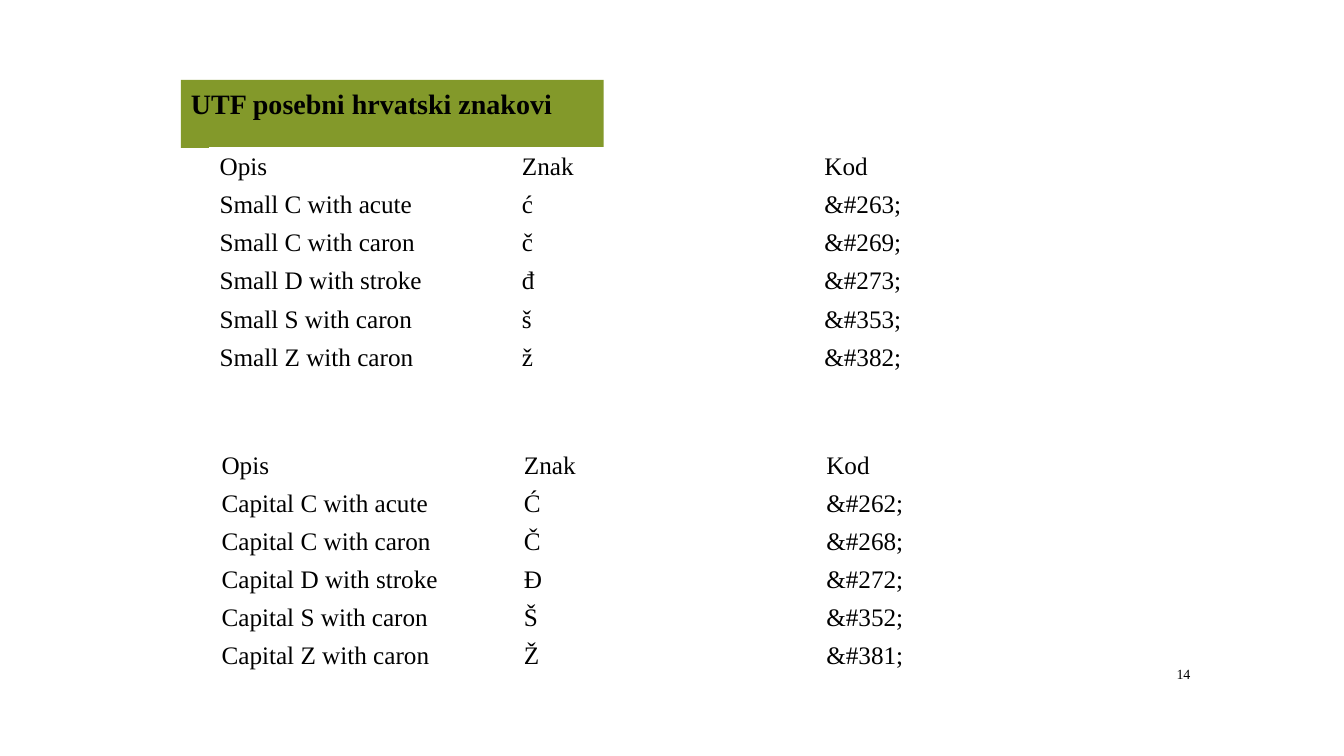
from pptx import Presentation
from pptx.dml.color import RGBColor
from pptx.enum.text import MSO_ANCHOR, MSO_AUTO_SIZE, PP_ALIGN
from pptx.util import Cm, Pt

BLACK = RGBColor(0x00, 0x00, 0x00)
GREEN = RGBColor(0x83, 0x99, 0x2A)
FONT = "Times New Roman"
LEFT = PP_ALIGN.LEFT
RIGHT = PP_ALIGN.RIGHT
TOP = MSO_ANCHOR.TOP
MIDDLE = MSO_ANCHOR.MIDDLE
NO_AUTOFIT = MSO_AUTO_SIZE.NONE

COLUMN_WIDTH = Cm(7.62)
ROW_HEIGHT = Cm(0.96)
HEADERS = ("Opis", "Znak", "Kod")
LETTERS = ("C with acute", "C with caron", "D with stroke", "S with caron", "Z with caron")
CHARACTER_TABLES = (
    ("Small", "ćčđšž", Cm(5.28), Cm(3.73)),
    ("Capital", "ĆČĐŠŽ", Cm(5.33), Cm(11.26)),
)


def write_text(text_frame, text, size, bold=False, alignment=LEFT):
    paragraph = text_frame.paragraphs[0]
    paragraph.alignment = alignment
    run = paragraph.add_run()
    run.text = text
    run.font.name = FONT
    run.font.size = Pt(size)
    run.font.bold = bold
    run.font.color.rgb = BLACK


presentation = Presentation()
presentation.slide_width = Cm(33.87)
presentation.slide_height = Cm(19.05)
slide = presentation.slides.add_slide(presentation.slide_layouts[5])

title = slide.shapes.title
title.left, title.top, title.width, title.height = Cm(4.56), Cm(2.01), Cm(10.65), Cm(1.72)
title.fill.solid()
title.fill.fore_color.rgb = GREEN
title_frame = title.text_frame
title_frame.auto_size = NO_AUTOFIT
title_frame.word_wrap = False
title_frame.vertical_anchor = TOP
title_frame.margin_left = Cm(0.25)
title_frame.margin_top = Cm(0.16)
write_text(title_frame, "UTF posebni hrvatski znakovi", 20, bold=True)

for letter_case, characters, left, top in CHARACTER_TABLES:
    rows = [HEADERS]
    for letter, character in zip(LETTERS, characters):
        rows.append((f"{letter_case} {letter}", character, f"&#{ord(character)};"))
    table = slide.shapes.add_table(
        len(rows), len(HEADERS), left, top,
        COLUMN_WIDTH * len(HEADERS), ROW_HEIGHT * len(rows),
    ).table
    table.first_row = False
    table.horz_banding = False
    for column in table.columns:
        column.width = COLUMN_WIDTH
    for row_index, row in enumerate(rows):
        table.rows[row_index].height = ROW_HEIGHT
        for column_index, text in enumerate(row):
            cell = table.cell(row_index, column_index)
            cell.fill.background()
            cell.vertical_anchor = MIDDLE
            cell.margin_top = cell.margin_bottom = Cm(0.1)
            write_text(cell.text_frame, text, 18)

number_box = slide.shapes.add_textbox(Cm(28.75), Cm(16.59), Cm(1.5), Cm(0.79))
number_box.text_frame.word_wrap = True
number_box.text_frame.vertical_anchor = MIDDLE
write_text(number_box.text_frame, "14", 10, alignment=RIGHT)

presentation.save("out.pptx")
